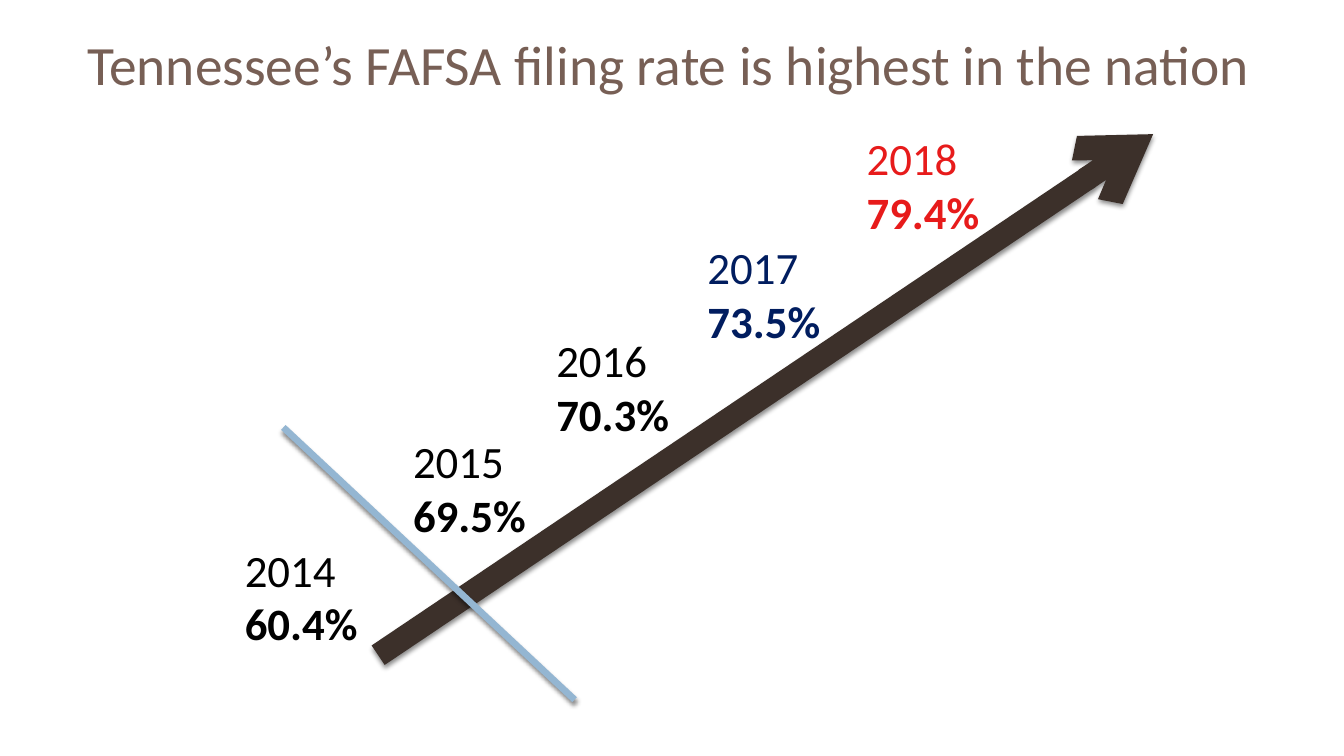
from lxml.etree import SubElement
from pptx import Presentation
from pptx.dml.color import RGBColor
from pptx.enum.shapes import MSO_CONNECTOR as Connector
from pptx.enum.text import MSO_ANCHOR as Anchor, MSO_AUTO_SIZE as AutoSize, PP_ALIGN as Align
from pptx.oxml.ns import qn
from pptx.util import Cm, Pt

COLORS = {
    "title": "775F55",
    "arrow": "3C302A",
    "divider": "94B6D2",
    "black": "000000",
    "navy": "011D5F",
    "red": "E71B1B",
}


class RateSlide:
    """Holds the style and the current slide."""

    font = "Calibri"

    def __init__(self, deck):
        self.slide = deck.slides.add_slide(deck.slide_layouts[6])

    def text(self, box, lines, color, frame_format, align=Align.LEFT):
        """Add a text box; each line is a (text, font format) pair."""
        frame = self.slide.shapes.add_textbox(*map(Cm, box)).text_frame
        for key, value in frame_format.items():
            setattr(frame, key, value)
        for number, (words, font_format) in enumerate(lines):
            paragraph = frame.add_paragraph() if number else frame.paragraphs[0]
            paragraph.alignment = align
            run = paragraph.add_run()
            run.text = words
            run.font.color.rgb = RGBColor.from_string(COLORS[color])
            for key, value in {"name": self.font, **font_format}.items():
                setattr(run.font, key, value)

    def line(self, start, end, color, width, arrow=False):
        """Add a straight line with a soft shadow below it."""
        line = self.slide.shapes.add_connector(Connector.STRAIGHT, *map(Cm, start + end))
        line.line.color.rgb = RGBColor.from_string(COLORS[color])
        line.line.width = Pt(width)
        properties = line._element.spPr
        if arrow:
            SubElement(properties.find(qn("a:ln")), qn("a:tailEnd"), type="arrow")
        effects = SubElement(properties, qn("a:effectLst"))
        shadow = SubElement(effects, qn("a:outerShdw"), blurRad=str(Pt(3)),
                            dist=str(Pt(2.4)), dir="5400000", rotWithShape="0")
        shade = SubElement(shadow, qn("a:srgbClr"), val=COLORS["black"])
        SubElement(shade, qn("a:alpha"), val="45000")


def main():
    deck = Presentation()
    deck.slide_width, deck.slide_height = Cm(33.87), Cm(19.05)
    page = RateSlide(deck)

    # Rising arrow
    page.line((9.53, 16.51), (29.06, 3.38), "arrow", 16.75, arrow=True)

    # Divider after the first year
    page.line((7.14, 10.77), (14.48, 17.63), "divider", 4.75)

    # Filing rate of each year
    rates = [
        (5.92, 13.54, "2014", "60.4%", "black"),
        (10.16, 10.8, "2015", "69.5%", "black"),
        (13.77, 8.26, "2016", "70.3%", "black"),
        (17.58, 5.92, "2017", "73.5%", "navy"),
        (21.59, 3.18, "2018", "79.4%", "red"),
    ]
    label_frame = {"word_wrap": False, "auto_size": AutoSize.SHAPE_TO_FIT_TEXT}
    for left, top, year, rate, color in rates:
        lines = [(year, {"size": Pt(32)}), (rate, {"size": Pt(32), "bold": True})]
        page.text((left, top, 3.81, 3), lines, color, label_frame)

    # Title
    headline = "Tennessee’s FAFSA filing rate is highest in the nation"
    title_frame = {"word_wrap": True, "vertical_anchor": Anchor.MIDDLE}
    page.text((1.75, 0.64, 30.2, 1.9), [(headline, {"size": Pt(39.6)})],
              "title", title_frame, Align.CENTER)

    deck.save("out.pptx")


if __name__ == "__main__":
    main()
